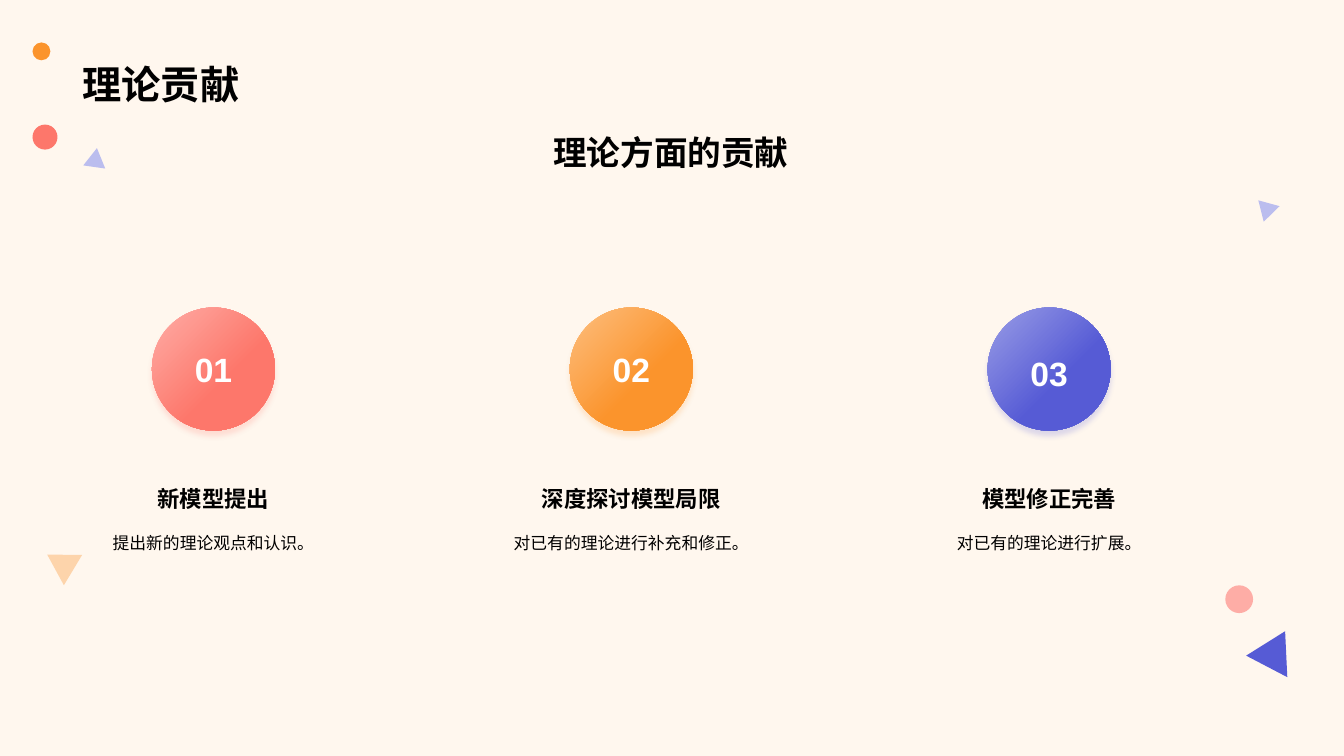
import dataclasses

import pptx
import pptx.dml.color
import pptx.enum.shapes
import pptx.enum.text
import pptx.oxml
import pptx.oxml.ns
import pptx.util

Cm = pptx.util.Cm
Pt = pptx.util.Pt
RGB = pptx.dml.color.RGBColor.from_string
MSO = pptx.enum.shapes.MSO_SHAPE
ANCHOR = pptx.enum.text.MSO_ANCHOR
ALIGN = pptx.enum.text.PP_ALIGN


@dataclasses.dataclass(frozen=True)
class Theme:
    font: str = "Arial"
    background: str = "FFF7EE"
    ink: str = "000000"
    white: str = "FFFFFF"
    coral: str = "FD776B"
    coral_light: str = "FEADA6"
    orange: str = "FB942C"
    orange_light: str = "FDBF80"
    orange_pale: str = "FDD4AB"
    indigo: str = "565BD5"
    indigo_light: str = "9A9DE6"
    indigo_pale: str = "BBBDEE"
    title: int = 28
    subtitle: int = 24
    heading: int = 16
    body: int = 12


def write(sp, text, *, size, color, font, bold=False, align=ALIGN.CENTER,
          anchor=ANCHOR.TOP, wrap=True, spacing=None):
    tf = sp.text_frame
    tf.word_wrap = wrap
    tf.auto_size = pptx.enum.text.MSO_AUTO_SIZE.NONE
    tf.vertical_anchor = anchor
    p = tf.paragraphs[0]
    p.alignment = align
    if spacing:
        p.line_spacing = spacing
    r = p.add_run()
    r.text = text
    r.font.name = font
    r.font.size = Pt(size)
    r.font.bold = bold
    r.font.color.rgb = RGB(color)


class Deck:
    def __init__(self, theme):
        self.theme = theme
        self.prs = pptx.Presentation()
        self.prs.slide_width = Cm(33.87)
        self.prs.slide_height = Cm(19.05)
        self.s = None

    def slide(self):
        self.s = self.prs.slides.add_slide(self.prs.slide_layouts[5])
        fill = self.s.background.fill
        fill.solid()
        fill.fore_color.rgb = RGB(self.theme.background)

    def title(self, text, x, y, w, h):
        sp = self.s.shapes.title
        sp.left, sp.top, sp.width, sp.height = map(Cm, (x, y, w, h))
        write(sp, text, size=self.theme.title, color=self.theme.ink,
              font=self.theme.font, bold=True, align=ALIGN.LEFT,
              anchor=ANCHOR.BOTTOM)

    def text(self, text, x, y, w, h, **style):
        sp = self.s.shapes.add_textbox(*map(Cm, (x, y, w, h)))
        write(sp, text, font=self.theme.font, **style)

    def shape(self, kind, x, y, w, h, color, rotation=0):
        sp = self.s.shapes.add_shape(kind, *map(Cm, (x, y, w, h)))
        sp.fill.solid()
        sp.fill.fore_color.rgb = RGB(color)
        sp.line.fill.background()
        sp.shadow.inherit = False
        sp.rotation = rotation
        return sp

    def badge(self, x, y, d, light, color):
        """Circle with a diagonal gradient and a soft shadow of its own colour."""
        sp = self.shape(MSO.OVAL, x, y, d, d, color)
        sp.fill.gradient()
        sp.fill.gradient_angle = 315
        for stop, position, tint in zip(sp.fill.gradient_stops, (0, 0.6), (light, color)):
            stop.position = position
            stop.color.rgb = RGB(tint)
        effects = sp.element.spPr.find(pptx.oxml.ns.qn("a:effectLst"))
        effects.append(pptx.oxml.parse_xml(
            f'<a:outerShdw {pptx.oxml.ns.nsdecls("a")} blurRad="{Pt(4)}" dist="{Pt(4)}" '
            f'dir="5400000" algn="t" rotWithShape="0"><a:srgbClr val="{color}">'
            '<a:alpha val="20000"/></a:srgbClr></a:outerShdw>'))

    def column(self, center, number, heading, body, light, color, number_top):
        t = self.theme
        self.badge(center - 1.55, 7.75, 3.1, light, color)
        self.text(heading, center - 2.78, 12.01, 5.56, 1.02, size=t.heading,
                  color=t.ink, bold=True, anchor=ANCHOR.BOTTOM)
        self.text(body, center - 3.56, 13.21, 7.12, 0.81, size=t.body,
                  color=t.ink, spacing=1.2)
        self.text(number, center - 0.74, number_top, 1.48, 1.27, size=t.subtitle,
                  color=t.white, bold=True, anchor=ANCHOR.BOTTOM, wrap=False)


def main():
    t = Theme()
    deck = Deck(t)
    deck.slide()

    for x, y, d, color in (
        (0.82, 3.14, 0.63, t.coral),
        (0.82, 1.07, 0.45, t.orange),
        (30.88, 14.75, 0.7, t.coral_light),
    ):
        deck.shape(MSO.OVAL, x, y, d, d, color)

    for x, y, w, h, color, rotation in (
        (31.57, 15.85, 1.17, 1, t.indigo, 27.6),
        (31.6, 4.98, 0.56, 0.48, t.indigo_pale, 315.6),
        (2.13, 3.73, 0.56, 0.48, t.indigo_pale, 8.2),
        (1.07, 13.79, 0.89, 0.76, t.orange_pale, 301.1),
    ):
        deck.shape(MSO.ISOSCELES_TRIANGLE, x, y, w, h, color, rotation)

    deck.title("理论贡献", 1.83, 0, 30.18, 2.84)
    deck.text("理论方面的贡献", 1.85, 3.2, 30.12, 1.27, size=t.subtitle,
              color=t.ink, bold=True)

    first_center, pitch = 5.38, 10.53
    columns = (
        ("新模型提出", "提出新的理论观点和认识。", t.coral_light, t.coral, 8.66),
        ("深度探讨模型局限", "对已有的理论进行补充和修正。", t.orange_light, t.orange, 8.66),
        ("模型修正完善", "对已有的理论进行扩展。", t.indigo_light, t.indigo, 8.76),
    )
    for i, column in enumerate(columns):
        deck.column(first_center + i * pitch, f"{i + 1:02}", *column)

    deck.prs.save("out.pptx")


if __name__ == "__main__":
    main()
